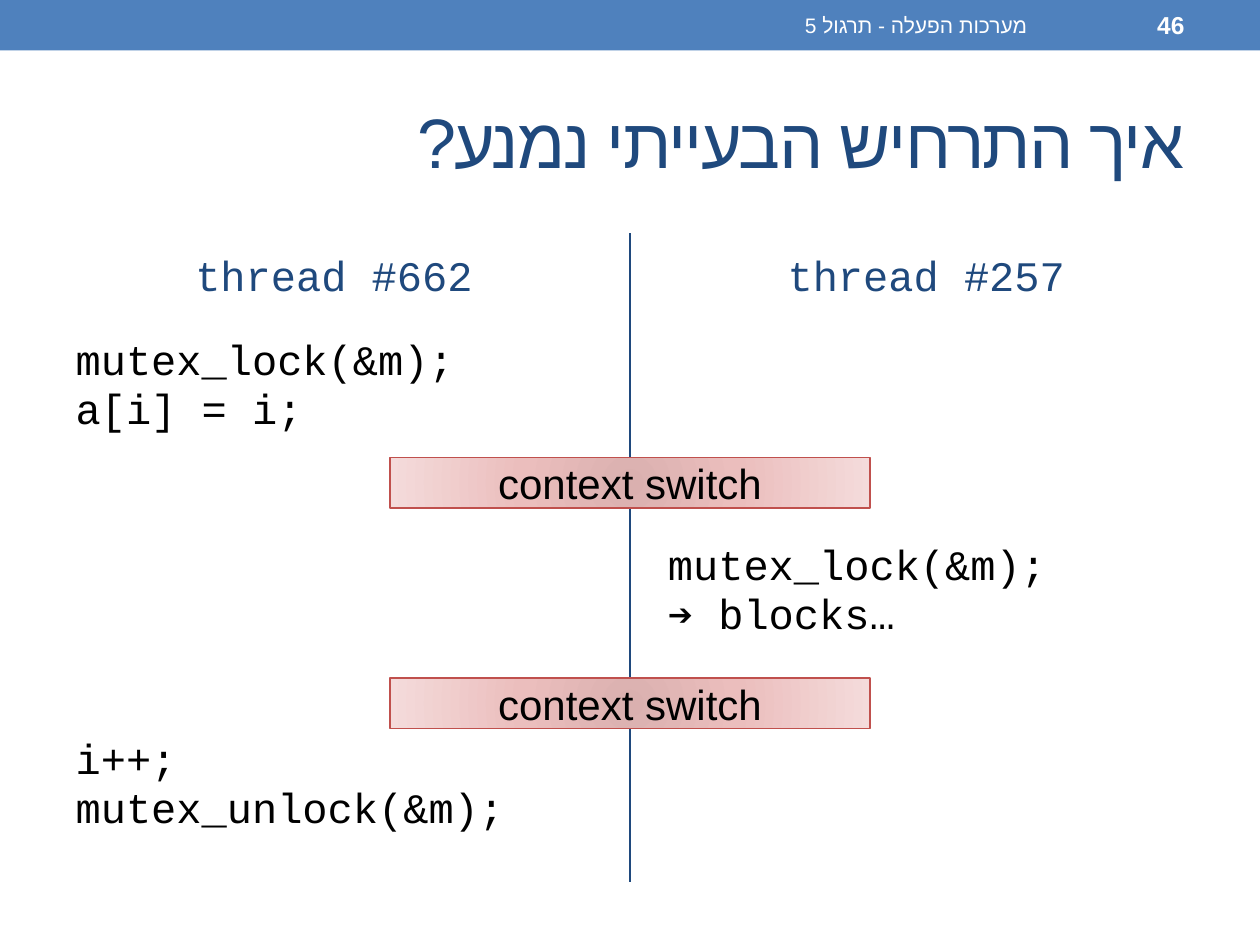
"""Build the slide on how a mutex prevents the problematic thread scenario."""
from lxml.etree import SubElement
from pptx import Presentation
from pptx.dml.color import RGBColor
from pptx.enum.shapes import MSO_CONNECTOR as Connector, MSO_SHAPE as Shape
from pptx.enum.text import MSO_ANCHOR as Anchor, MSO_AUTO_SIZE as AutoSize, PP_ALIGN as Align
from pptx.oxml import parse_xml
from pptx.oxml.ns import nsdecls, qn
from pptx.util import Cm, Pt

THEME = {
    "sans": "Arial", "mono": "Courier New",
    "navy": "1F497D", "blue": "4F81BD", "red": "C0504D", "black": "000000", "white": "FFFFFF",
    "glow": [(0, "DAB0AF"), (45, "EBBEBD"), (100, "F4DBDB")],
    "title": 40, "text": 24, "page": 14, "footer": 12,
}
PAGE_WIDTH, PAGE_HEIGHT = 25.4, 19.05
MARGIN, COLUMN_WIDTH = 1.27, 10.92
HEAD_TOP, HEAD_HEIGHT = 4.65, 1.78
CODE_TOP, CODE_HEIGHT = 6.78, 10.97
SWITCH_WIDTH, SWITCH_HEIGHT = 9.68, 1.02
BAR_HEIGHT = 1.02

TITLE = "איך התרחיש הבעייתי נמנע?"
FOOTER = "מערכות הפעלה - תרגול 5"
PAGE_NUMBER = "46"
THREADS = [
    ("thread #662", 0.13, [("mutex_lock(&m);", 5, 0.8), ("a[i] = i;", 5, 0.8),
                           ("i++;", 171.5, 1.0), ("mutex_unlock(&m);", 5, 0.8)]),
    ("thread #257", 4.28, [("mutex_lock(&m);", 5, 0.8), ("➔ blocks…", 5, 0.8)]),
]
SWITCH_LABEL = "context switch"
SWITCH_TOPS = [9.22, 13.67]


def color(name):
    return RGBColor.from_string(THEME[name])


def place(box, left, top, width, height):
    bounds = {"left": left, "top": top, "width": width, "height": height}
    for name, value in bounds.items():
        setattr(box, name, Cm(value))


def set_frame(box, anchor, inset=0.13):
    formats = {"word_wrap": True, "auto_size": AutoSize.NONE, "vertical_anchor": anchor,
               "margin_top": Cm(inset)}
    for name, value in formats.items():
        setattr(box.text_frame, name, value)


def write(para, text, face, size, ink, align, bold=False, rtl=False, before=0, spacing=1.0):
    formats = {"alignment": align, "space_before": Pt(before), "line_spacing": spacing}
    for name, value in formats.items():
        setattr(para, name, value)
    properties = para._p.get_or_add_pPr()
    if rtl:
        properties.set("rtl", "1")
    span = para.add_run()
    span.text = text
    for name, value in {"name": THEME[face], "size": Pt(THEME[size]), "bold": bold}.items():
        setattr(span.font, name, value)
    span.font.color.rgb = color(ink)
    SubElement(span.font._element, qn("a:cs")).set("typeface", THEME[face])
    return span


def add_label(slide, bounds, text, size, bold=False):
    box = slide.shapes.add_textbox(*map(Cm, bounds))
    set_frame(box, Anchor.MIDDLE)
    write(box.text_frame.paragraphs[0], text, "sans", size, "white", Align.RIGHT, bold, rtl=True)


def fill_code(box, inset, lines):
    set_frame(box, Anchor.TOP, inset)
    for number, (text, before, spacing) in enumerate(lines):
        frame = box.text_frame
        para = frame.add_paragraph() if number else frame.paragraphs[0]
        write(para, text, "mono", "text", "black", Align.LEFT, before=before, spacing=spacing)
        properties = para._p.get_or_add_pPr()
        properties.set("marL", str(Cm(0.5)))
        properties.set("indent", str(-Cm(0.5)))
        SubElement(properties, qn("a:buNone"))


def add_switch(slide, top):
    left = (PAGE_WIDTH - SWITCH_WIDTH) / 2
    box = slide.shapes.add_shape(Shape.FLOWCHART_PROCESS,
                                 *map(Cm, (left, top, SWITCH_WIDTH, SWITCH_HEIGHT)))
    box.shadow.inherit = False
    box.line.color.rgb = color("red")
    box.line.width = Pt(0.75)
    stops = "".join(f'<a:gs pos="{position * 1000}"><a:srgbClr val="{tint}"/></a:gs>'
                    for position, tint in THEME["glow"])
    center = 'l="50000" t="50000" r="50000" b="50000"'
    box._element.spPr.find(qn("a:prstGeom")).addnext(parse_xml(
        f'<a:gradFill {nsdecls("a")} rotWithShape="1"><a:gsLst>{stops}</a:gsLst>'
        f'<a:path path="circle"><a:fillToRect {center}/></a:path></a:gradFill>'))
    set_frame(box, Anchor.MIDDLE)
    write(box.text_frame.paragraphs[0], SWITCH_LABEL, "sans", "text", "black", Align.CENTER)


def main():
    deck = Presentation()
    deck.slide_width, deck.slide_height = Cm(PAGE_WIDTH), Cm(PAGE_HEIGHT)
    slide = deck.slides.add_slide(deck.slide_layouts.get_by_name("Comparison"))

    bar = slide.shapes.add_shape(Shape.RECTANGLE, 0, 0, Cm(PAGE_WIDTH), Cm(BAR_HEIGHT))
    bar.shadow.inherit = False
    bar.fill.solid()
    bar.fill.fore_color.rgb = color("blue")
    bar.line.fill.background()

    middle = Cm(PAGE_WIDTH / 2)
    divider = slide.shapes.add_connector(Connector.STRAIGHT, middle, Cm(4.7), middle, Cm(17.78))
    divider.line.color.rgb = color("navy")
    divider.line.width = Pt(1.5)
    SubElement(divider._element.spPr, qn("a:effectLst"))

    title = slide.shapes.title
    place(title, MARGIN, 1.47, PAGE_WIDTH - 2 * MARGIN, 2.74)
    set_frame(title, Anchor.MIDDLE)
    span = write(title.text_frame.paragraphs[0], TITLE, "sans", "title", "navy", Align.RIGHT, rtl=True)
    span.font._element.set("spc", "-100")

    bodies = list(slide.placeholders)[1:]
    lefts = [MARGIN, PAGE_WIDTH - MARGIN - COLUMN_WIDTH]
    for left, (name, inset, lines), head, code in zip(lefts, THREADS, bodies[::2], bodies[1::2]):
        place(head, left, HEAD_TOP, COLUMN_WIDTH, HEAD_HEIGHT)
        set_frame(head, Anchor.MIDDLE)
        write(head.text_frame.paragraphs[0], name, "mono", "text", "navy", Align.CENTER,
              rtl=True, before=5)
        place(code, left, CODE_TOP, COLUMN_WIDTH, CODE_HEIGHT)
        fill_code(code, inset, lines)

    add_label(slide, (9.53, 0.05, 11.43, 0.91), FOOTER, "footer")
    add_label(slide, (21.16, 0.05, 2.97, 0.91), PAGE_NUMBER, "page", bold=True)
    for top in SWITCH_TOPS:
        add_switch(slide, top)
    deck.save("out.pptx")


if __name__ == "__main__":
    main()
